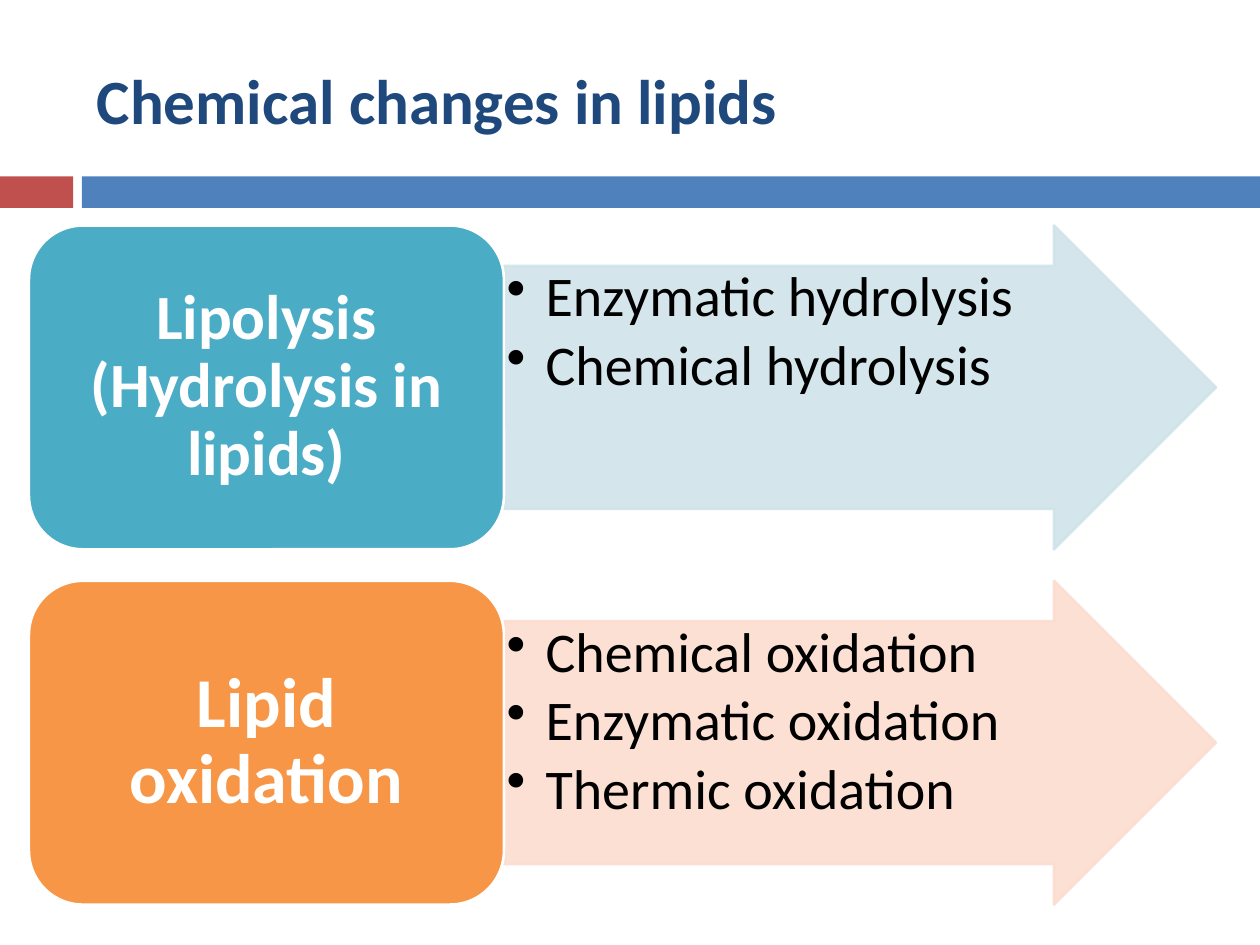
from lxml.etree import SubElement
from pptx import Presentation
from pptx.dml.color import RGBColor as RGB
from pptx.enum.shapes import MSO_SHAPE as Shape
from pptx.enum.text import MSO_ANCHOR as Anchor, PP_ALIGN as Align
from pptx.oxml.ns import qn
from pptx.util import Inches, Pt

WHITE = RGB(0xFF, 0xFF, 0xFF)
BLACK = RGB(0x00, 0x00, 0x00)
NAVY = RGB(0x1F, 0x49, 0x7D)
RED = RGB(0xC0, 0x50, 0x4D)
BLUE = RGB(0x4F, 0x81, 0xBD)
TEAL = RGB(0x4B, 0xAC, 0xC6)
ORANGE = RGB(0xF7, 0x96, 0x46)
PALE_TEAL = RGB(0xD0, 0xE3, 0xEA)
PALE_ORANGE = RGB(0xFC, 0xDD, 0xCF)

# Row layout in inches
TOP, STEP, HIGH = 1.79, 2.82, 2.57
LEFT, SPLIT, RIGHT = 0.23, 4, 9.65

# Label, its size, its side and top insets, its colours, its points
ROWS = [
    ("Lipolysis (Hydrolysis in lipids)", 36, 0.15, 0.07, TEAL, PALE_TEAL,
     ["Enzymatic hydrolysis", "Chemical hydrolysis"]),
    ("Lipid oxidation", 40, 0.17, 0.08, ORANGE, PALE_ORANGE,
     ["Chemical oxidation", "Enzymatic oxidation", "Thermic oxidation"]),
]


def put(item, form):
    for key, val in form.items():
        setattr(item, key, val)


def fade(fill):
    """Make a solid fill 90 % opaque."""
    for tint in fill.iter(qn("a:srgbClr")):
        SubElement(tint, qn("a:alpha"), val="90000")


def add_block(slide, kind, box, color, edge=None):
    shape = slide.shapes.add_shape(kind, *map(Inches, box))
    shape.shadow.inherit = False
    shape.fill.solid()
    shape.fill.fore_color.rgb = color
    if edge is None:
        shape.line.fill.background()
    else:
        shape.line.color.rgb = edge
        shape.line.width = Pt(1.5)
    return shape


def add_dot(para):
    props = para._p.get_or_add_pPr()
    for key, gap in (("marL", 0.31), ("indent", -0.31)):
        props.set(key, str(Inches(gap)))
    SubElement(props, qn("a:buChar"), char="•")


def write(shape, lines, frame, form, font, dots=False):
    text = shape.text_frame
    put(text, {"word_wrap": True, **frame})
    for num, line in enumerate(lines):
        para = text.add_paragraph() if num else text.paragraphs[0]
        put(para, form)
        if dots:
            add_dot(para)
        run = para.add_run()
        run.text = line
        put(run.font, {"name": "Calibri", "size": Pt(font["size"]),
                       "bold": font["bold"]})
        run.font.color.rgb = font["color"]


def pads(side, top):
    return {"margin_left": Inches(side), "margin_right": Inches(side),
            "margin_top": Inches(top), "margin_bottom": Inches(top)}


def add_title(slide, title):
    box = slide.shapes.add_textbox(*map(Inches, (0.67, 0.25, 8.92, 1.08)))
    write(box, [title], {"vertical_anchor": Anchor.MIDDLE},
          {"alignment": Align.JUSTIFY},
          {"size": 36, "bold": True, "color": NAVY})


def add_arrow(slide, top, color, points):
    arrow = add_block(slide, Shape.RIGHT_ARROW,
                      (SPLIT, top, RIGHT - SPLIT, HIGH), color, color)
    arrow.adjustments[0] = 0.75
    arrow.adjustments[1] = 0.5
    fade(arrow._element.spPr)
    write(arrow, points, {"vertical_anchor": Anchor.TOP, **pads(0.02, 0.02)},
          {"alignment": Align.LEFT, "line_spacing": 0.9,
           "space_after": Pt(4.5)},
          {"size": 32, "bold": False, "color": BLACK}, dots=True)


def add_label(slide, top, color, label, size, inset):
    card = add_block(slide, Shape.ROUNDED_RECTANGLE,
                     (LEFT, top, SPLIT - LEFT, HIGH), color, WHITE)
    write(card, [label], {"vertical_anchor": Anchor.MIDDLE, **inset},
          {"alignment": Align.CENTER, "line_spacing": 0.9},
          {"size": size, "bold": True, "color": WHITE})


def main():
    deck = Presentation()
    deck.slide_width, deck.slide_height = Inches(10), Inches(7.5)
    slide = deck.slides.add_slide(deck.slide_layouts[6])

    # Header band and title
    add_block(slide, Shape.RECTANGLE, (0, 1.4, 0.58, 0.25), RED)
    add_block(slide, Shape.RECTANGLE, (0.65, 1.4, 9.35, 0.25), BLUE)
    add_title(slide, "Chemical changes in lipids")

    # One label and arrow per kind of change
    for num, (label, size, side, edge, dark, pale, points) in enumerate(ROWS):
        top = TOP + num * STEP
        add_arrow(slide, top, pale, points)
        add_label(slide, top, dark, label, size, pads(side, edge))

    deck.save("out.pptx")


if __name__ == "__main__":
    main()
